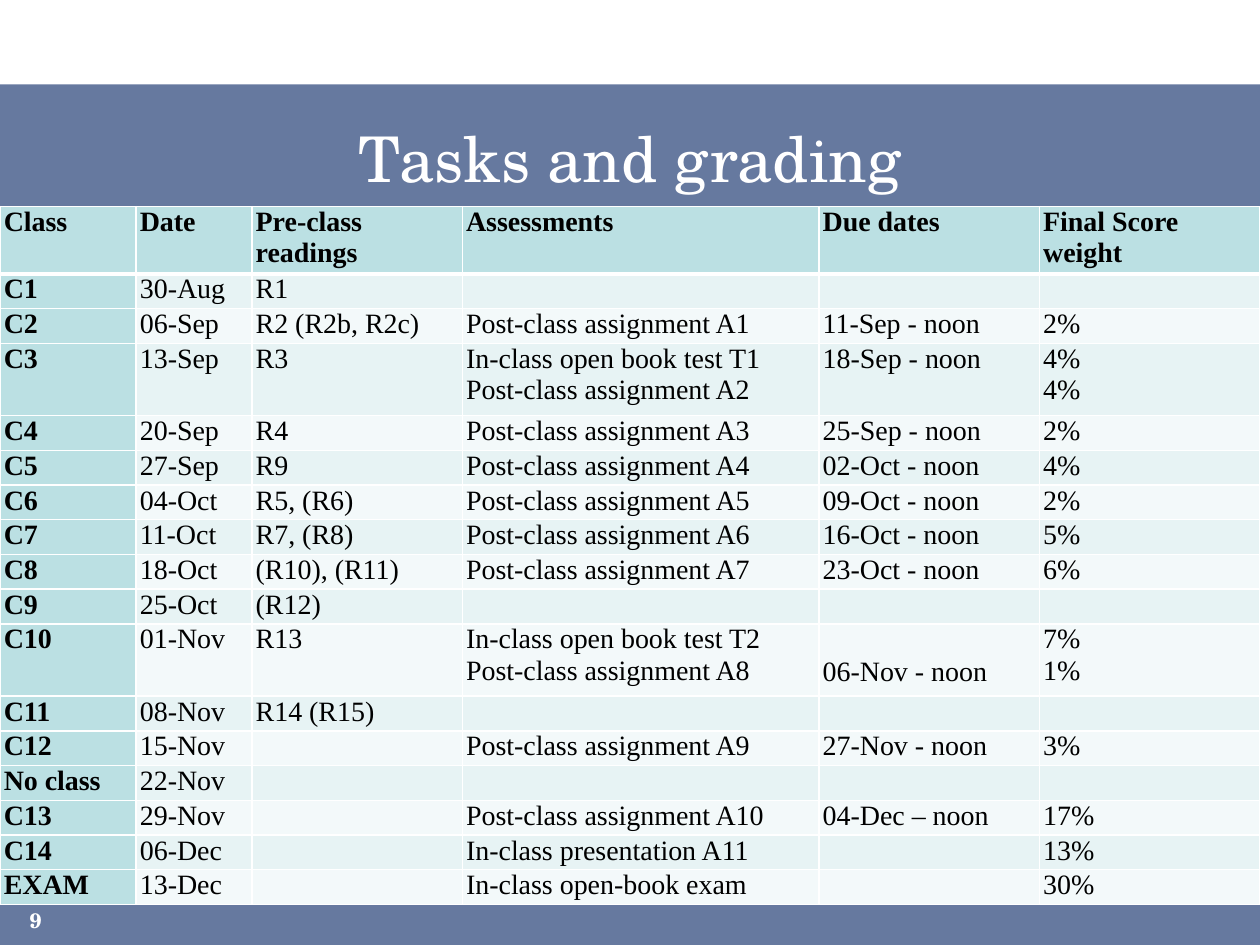
from lxml.etree import SubElement
from pptx import Presentation
from pptx.dml.color import RGBColor
from pptx.enum.shapes import MSO_SHAPE as Shape
from pptx.enum.text import MSO_ANCHOR as Anchor, PP_ALIGN as Align
from pptx.oxml.ns import qn
from pptx.util import Inches, Pt

WHITE = RGBColor(0xFF, 0xFF, 0xFF)
BLACK = RGBColor(0x00, 0x00, 0x00)
NAVY = RGBColor(0x00, 0x20, 0x60)
TEAL = RGBColor(0xBB, 0xE0, 0xE3)
MINT = RGBColor(0xE7, 0xF3, 0xF4)
PALE = RGBColor(0xF3, 0xF9, 0xFA)
HEAD_FONT = "TeX Gyre Schola"
BODY_FONT = "Times New Roman"
WIDTH, HEIGHT = Inches(10), Inches(7.5)

COLS = [1.08, 0.92, 1.67, 2.83, 1.75, 1.75]
LOW, TALL = Pt(19.85), Pt(41.3)
LINE = Pt(18.4)
ROWS = [
    ["Class", "Date", "Pre-class\nreadings", "Assessments", "Due dates", "Final Score weight"],
    ["C1", "30-Aug", "R1", "", "", ""],
    ["C2", "06-Sep", "R2 (R2b, R2c)", "Post-class assignment A1", "11-Sep - noon", "2%"],
    ["C3", "13-Sep", "R3", "In-class open book test T1\nPost-class assignment A2",
     "18-Sep - noon", "4%\n4%"],
    ["C4", "20-Sep", "R4", "Post-class assignment A3", "25-Sep - noon", "2%"],
    ["C5", "27-Sep", "R9", "Post-class assignment A4", "02-Oct - noon", "4%"],
    ["C6", "04-Oct", "R5, (R6)", "Post-class assignment A5", "09-Oct - noon", "2%"],
    ["C7", "11-Oct", "R7, (R8)", "Post-class assignment A6", "16-Oct - noon", "5%"],
    ["C8", "18-Oct", "(R10), (R11)", "Post-class assignment A7", "23-Oct - noon", "6%"],
    ["C9", "25-Oct", "(R12)", "", "", ""],
    ["C10", "01-Nov", "R13", "In-class open book test T2\nPost-class assignment A8",
     "06-Nov - noon", "7%\n1%"],
    ["C11", "08-Nov", "R14 (R15)", "", "", ""],
    ["C12", "15-Nov", "", "Post-class assignment A9", "27-Nov - noon", "3%"],
    ["No class", "22-Nov", "", "", "", ""],
    ["C13", "29-Nov", "", "Post-class assignment A10", "04-Dec – noon", "17%"],
    ["C14", "06-Dec", "", "In-class presentation A11", "", "13%"],
    ["EXAM", "13-Dec", "", "In-class open-book exam", "", "30%"],
]


def add_run(para, text, font, size, color, bold=False):
    run = para.add_run()
    run.text = text
    run.font.name = font
    run.font.size = Pt(size)
    run.font.color.rgb = color
    run.font.bold = bold


def add_band(slide):
    """Put the translucent band behind everything else."""
    top = Inches(0.67)
    band = slide.shapes.add_shape(Shape.RECTANGLE, 0, top, WIDTH, HEIGHT - top)
    band.shadow.inherit = False
    band.line.fill.background()
    band.fill.solid()
    band.fill.fore_color.rgb = NAVY
    color = band.fill._xPr.find(".//" + qn("a:srgbClr"))
    SubElement(color, qn("a:alpha"), val="60000")
    slide.shapes._spTree.insert(2, band._element)


def set_title(slide, text):
    title = slide.shapes.title
    title.left, title.top = Inches(0.25), Inches(0.83)
    title.width, title.height = Inches(9.5), Inches(0.83)
    frame = title.text_frame
    frame.vertical_anchor = Anchor.MIDDLE
    para = frame.paragraphs[0]
    para.alignment = Align.CENTER
    add_run(para, text, HEAD_FONT, 36, WHITE)


def add_number(slide, text):
    box = slide.shapes.add_textbox(0, Inches(7.08), Inches(0.33), Inches(0.32))
    frame = box.text_frame
    frame.word_wrap = True
    frame.margin_left = frame.margin_right = 0
    frame.margin_top = frame.margin_bottom = 0
    frame.vertical_anchor = Anchor.BOTTOM
    para = frame.paragraphs[0]
    para.alignment = Align.RIGHT
    add_run(para, text, HEAD_FONT, 12, WHITE, True)


def add_edges(cell, row):
    """Draw white cell borders, thick between the header and the body."""
    props = cell._tc.get_or_add_tcPr()
    thick = {"lnB": 0, "lnT": 1}
    for side in ("lnL", "lnR", "lnT", "lnB"):
        width = Pt(3 if thick.get(side) == row else 1)
        line = SubElement(props, qn("a:" + side), w=str(width))
        fill = SubElement(line, qn("a:solidFill"))
        SubElement(fill, qn("a:srgbClr"), val=str(WHITE))


def fill_cell(cell, text, row, col):
    head = row == 0 or col == 0
    cell.margin_left = cell.margin_right = Inches(0.03)
    cell.margin_top = cell.margin_bottom = 0
    add_edges(cell, row)
    cell.fill.solid()
    cell.fill.fore_color.rgb = TEAL if head else MINT if row % 2 else PALE
    frame = cell.text_frame
    if not text:
        SubElement(frame.paragraphs[0]._p, qn("a:endParaRPr"), sz="1600")
        return
    for i, line in enumerate(text.split("\n")):
        para = frame.add_paragraph() if i else frame.paragraphs[0]
        add_run(para, line, BODY_FONT, 16, BLACK, head)


def add_plan(slide):
    heights = [TALL if row[0] in ("C3", "C10") else LOW for row in ROWS]
    table = slide.shapes.add_table(len(ROWS), len(COLS), 0, Inches(1.64),
                                   WIDTH, sum(heights)).table
    for col, width in zip(table.columns, COLS):
        col.width = Inches(width)
    for r, (row, height) in enumerate(zip(ROWS, heights)):
        table.rows[r].height = height
        for c, text in enumerate(row):
            fill_cell(table.cell(r, c), text, r, c)
    # The C10 due date belongs to the second assessment line.
    table.cell(10, 4).margin_top = LINE


def main():
    deck = Presentation()
    deck.slide_width, deck.slide_height = WIDTH, HEIGHT
    slide = deck.slides.add_slide(deck.slide_layouts[5])
    add_band(slide)
    set_title(slide, "Tasks and grading")
    add_number(slide, "9")
    add_plan(slide)
    deck.save("out.pptx")


if __name__ == "__main__":
    main()
